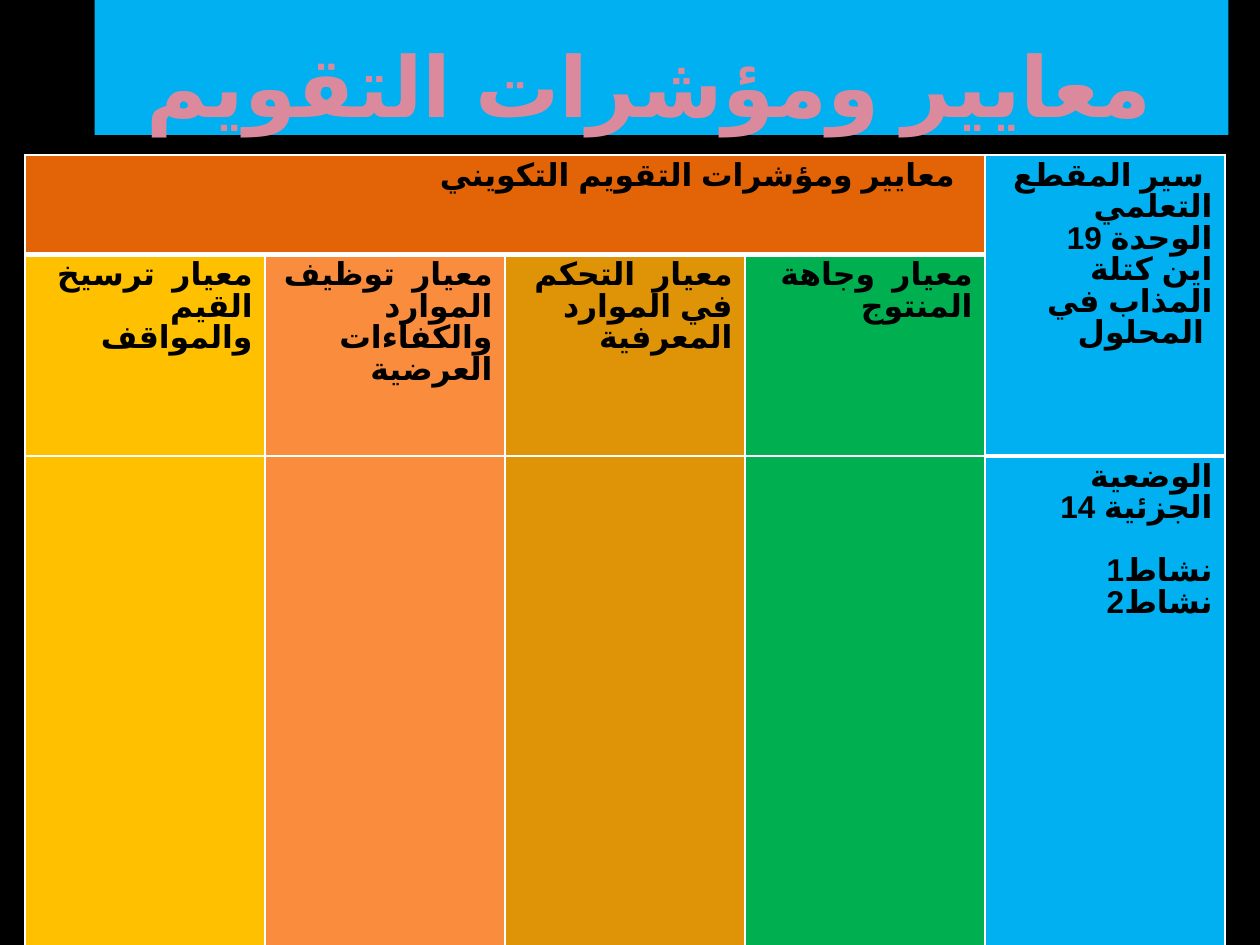
from lxml import etree
from pptx import Presentation
from pptx.dml.color import RGBColor
from pptx.enum import lang, text
from pptx.oxml import ns
from pptx.util import Inches, Pt

HEADING = "معايير ومؤشرات التقويم "
CRITERIA_HEADER = "معايير ومؤشرات التقويم التكويني  "
CRITERIA = [
    ("معيار  ترسيخ القيم والمواقف", "FFC000"),
    ("معيار  توظيف الموارد والكفاءات العرضية", "FA8D3D"),
    ("معيار  التحكم في الموارد المعرفية", "DF9307"),
    ("معيار  وجاهة المنتوج", "00B050"),
]
LESSON = ["سير المقطع ", "التعلمي", "الوحدة 19", " اين كتلة المذاب في المحلول "]
SITUATION = ["الوضعية الجزئية 14", "نشاط1", "نشاط2"]

THEME = {
    "background": "000000", "lesson": "00B0F0", "criteria": "E36406",
    "border": "FFFFFF", "heading": "DB8A9E", "ink": "000000",
    "heading_font": "Open Sans", "body_font": "TeX Gyre Pagella",
    "arabic_font": "Arial",
    "heading_size": Pt(48), "body_size": Pt(18),
}
TITLE_BOX = (0.75, 0, 9, 1.07)
TABLE_LEFT, TABLE_TOP = 0.2, 1.23
COLUMN_WIDTH = 1.905
ROW_HEIGHTS = [0.79, 1.12, 4.16]


def paint(fill, color):
    fill.solid()
    fill.fore_color.rgb = RGBColor.from_string(color)


def add_arabic_run(paragraph, words, color, **values):
    run = paragraph.add_run()
    run.text = words
    paint(run.font.fill, color)
    values.update(bold=True, language_id=lang.MSO_LANGUAGE_ID.ARABIC_ALGERIA)
    for name, value in values.items():
        setattr(run.font, name, value)
    etree.SubElement(run._r.get_or_add_rPr(), ns.qn("a:cs"),
                     typeface=THEME["arabic_font"])


def draw_borders(cell, bottom_width):
    """Outline a cell; call before filling it, as borders come first in the XML."""
    properties = cell._tc.get_or_add_tcPr()
    for side in "LRTB":
        width = bottom_width if side == "B" else 1
        line = etree.SubElement(properties, ns.qn(f"a:ln{side}"), w=str(Pt(width)))
        solid = etree.SubElement(line, ns.qn("a:solidFill"))
        etree.SubElement(solid, ns.qn("a:srgbClr"), val=THEME["border"])


def write(cell, lines):
    frame = cell.text_frame
    for index, line in enumerate(lines):
        paragraph = frame.add_paragraph() if index else frame.paragraphs[0]
        paragraph.alignment = text.PP_ALIGN.RIGHT
        paragraph.line_spacing = THEME["body_size"]
        add_arabic_run(paragraph, line, THEME["ink"],
                       name=THEME["body_font"], size=THEME["body_size"])


def add_heading(slide):
    title = slide.shapes.title
    title.left, title.top, title.width, title.height = map(Inches, TITLE_BOX)
    paint(title.fill, THEME["lesson"])
    layout = {
        "margin_left": Inches(0.05), "margin_right": Inches(0.05),
        "margin_top": 0, "margin_bottom": 0, "word_wrap": True,
        "auto_size": text.MSO_AUTO_SIZE.NONE,
        "vertical_anchor": text.MSO_ANCHOR.BOTTOM,
    }
    for name, value in layout.items():
        setattr(title.text_frame, name, value)
    paragraph = title.text_frame.paragraphs[0]
    paragraph.alignment = text.PP_ALIGN.CENTER
    add_arabic_run(paragraph, HEADING, THEME["heading"],
                   name=THEME["heading_font"], size=THEME["heading_size"])


def add_criteria_table(slide):
    fills = [color for _, color in CRITERIA] + [THEME["lesson"]]
    lesson_column = len(CRITERIA)
    box = (TABLE_LEFT, TABLE_TOP, COLUMN_WIDTH * len(fills), sum(ROW_HEIGHTS))
    table = slide.shapes.add_table(
        len(ROW_HEIGHTS), len(fills), *map(Inches, box)).table
    for column in table.columns:
        column.width = Inches(COLUMN_WIDTH)
    for row, height in zip(table.rows, ROW_HEIGHTS):
        row.height = Inches(height)

    for row in range(len(ROW_HEIGHTS)):
        for column, color in enumerate(fills):
            cell = table.cell(row, column)
            ends_header = row == 0 or (row == 1 and column == lesson_column)
            draw_borders(cell, 3 if ends_header else 1)
            in_header = row == 0 and column < lesson_column
            paint(cell.fill, THEME["criteria"] if in_header else color)

    table.cell(0, 0).merge(table.cell(0, lesson_column - 1))
    table.cell(0, lesson_column).merge(table.cell(1, lesson_column))
    write(table.cell(0, 0), [CRITERIA_HEADER])
    write(table.cell(0, lesson_column), LESSON)
    for column, (criterion, _) in enumerate(CRITERIA):
        write(table.cell(1, column), [criterion])
    situation = table.cell(2, lesson_column)
    write(situation, SITUATION)
    situation.text_frame.paragraphs[1].space_before = THEME["body_size"]


def main():
    deck = Presentation()
    deck.slide_width, deck.slide_height = Inches(10), Inches(7.5)
    slide = deck.slides.add_slide(deck.slide_layouts[0])
    paint(slide.background.fill, THEME["background"])
    subtitle = slide.placeholders[1].element
    subtitle.getparent().remove(subtitle)
    add_heading(slide)
    add_criteria_table(slide)
    deck.save("out.pptx")


if __name__ == "__main__":
    main()
